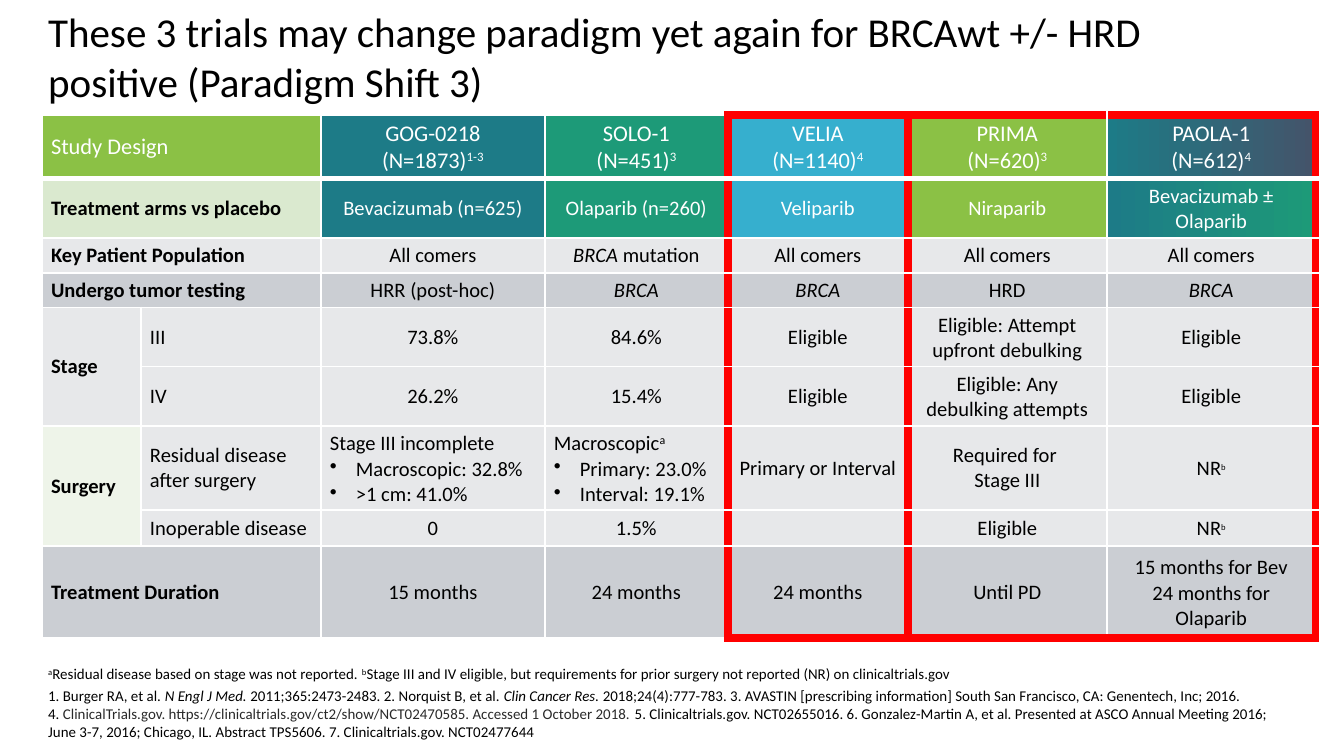
from lxml import etree
from pptx import Presentation, util as u
from pptx.dml.color import RGBColor
from pptx.enum import text as t
from pptx.oxml.ns import qn

PX = 914400 / 134.4
WHITE, BLACK, RED = "FFFFFF", "000000", "FF0000"
PALE, GREY = "E7E8EA", "CBCED3"
NAVY, TEAL, SKY, LIME = "1D7B87", "1D9A78", "36AFCE", "8BC145"


def px(n):
    return u.Emu(round(n * PX))


def write(para, line, size, color, bold=False):
    """Marks between bars: ^ raised, _ italic, ~ dark grey; \\v breaks the line."""
    for part in line.split("|"):
        mark = part[:1] if part[:1] in ("^", "_", "~") else ""
        for i, piece in enumerate(part[len(mark):].split("\v")):
            if i:
                para.add_line_break()
                etree.SubElement(para._p[-1], qn("a:rPr"), sz=str(size * 100))
            if not piece:
                continue
            run = para.add_run()
            run.text = piece
            font = run.font
            font.name, font.bold = "Calibri", bold
            font.size = u.Pt(8 if part == "^b" else size)
            font.color.rgb = RGBColor.from_string("292929" if mark == "~" else color)
            if mark == "_":
                font.italic = True
            if mark == "^":
                run._r.get_or_add_rPr().set("baseline", "30000")
    etree.SubElement(para._p, qn("a:endParaRPr"), sz=str(size * 100))


deck = Presentation()
deck.slide_width, deck.slide_height = px(1344), px(756)
slide = deck.slides.add_slide(deck.slide_layouts[6])

# Title and footnotes
notes = [
    "^a|Residual disease based on stage was not reported. |^b|Stage III and IV eligible, "
    "but requirements for prior surgery not reported (NR) on clinicaltrials.gov",
    "1. Burger RA, et al. |_N Engl J Med. |2011;365:2473-2483. 2. Norquist B, et al. "
    "|_Clin Cancer Res. |2018;24(4):777-783. 3. AVASTIN [prescribing information] "
    "South San Francisco, CA: Genentech, Inc; 2016. \v4.|~ ClinicalTrials.gov. "
    "https://clinicaltrials.gov/ct2/show/NCT02470585. Accessed 1 October 2018. "
    "|5. Clinicaltrials.gov. NCT02655016. 6. Gonzalez-Martin A, et al. Presented at ASCO "
    "Annual Meeting 2016; June 3-7, 2016; Chicago, IL. Abstract TPS5606. "
    "7. Clinicaltrials.gov. NCT02477644",
]
title = ["These 3 trials may change paradigm yet again for BRCAwt +/- HRD positive "
         "(Paradigm Shift 3)"]
for lines, box, size, anchor in (
    (title, (35, 19, 1211, 74), 22, t.MSO_ANCHOR.MIDDLE),
    (notes, (35, 663, 1255, 84), 8, t.MSO_ANCHOR.BOTTOM),
):
    frame = slide.shapes.add_textbox(*map(px, box)).text_frame
    frame.word_wrap, frame.vertical_anchor = True, anchor
    for i, line in enumerate(lines):
        para = frame.add_paragraph() if i else frame.paragraphs[0]
        if i:
            para.space_before = u.Pt(2.2)
        write(para, line, size, BLACK)

# Table content: None is a cell covered by a merge
rows = [
    ["Study Design", None, "GOG-0218\n(N=1873)|^1-3", "SOLO-1\n(N=451)|^3",
     "VELIA\v(N=1140)|^4", "PRIMA\n(N=620)|^3", "PAOLA-1\n(N=612)|^4"],
    ["Treatment arms vs placebo", None, "Bevacizumab (n=625)", "Olaparib (n=260)",
     "Veliparib", "Niraparib", "Bevacizumab ± Olaparib"],
    ["Key Patient Population", None, "All comers", "_BRCA |mutation",
     "All comers", "All comers", "All comers"],
    ["Undergo tumor testing", None, "HRR (post-hoc)", "_BRCA", "_BRCA", "HRD", "_BRCA"],
    ["Stage", "III", "73.8%", "84.6%", "Eligible",
     "Eligible: Attempt upfront debulking", "Eligible"],
    [None, "IV", "26.2%", "15.4%", "Eligible", "Eligible: Any debulking attempts", "Eligible"],
    ["Surgery", "Residual disease after surgery",
     "Stage III incomplete\n•Macroscopic: 32.8%\n•>1 cm: 41.0%",
     "Macroscopic|^a\n•Primary: 23.0%\n•Interval: 19.1%",
     "Primary or Interval", "Required for \vStage III", "NR|^b"],
    [None, "Inoperable disease", "0", "1.5%", "", "Eligible", "NR|^b"],
    ["Treatment Duration", None, "15 months", "24 months", "24 months", "Until PD",
     "15 months for Bev\n24 months for Olaparib"],
]
fills = [
    [LIME, LIME, NAVY, TEAL, SKY, LIME, (NAVY, "44546A")],
    ["DAE9CF", "DAE9CF", NAVY, TEAL, SKY, LIME, (NAVY, TEAL)],
] + [[tone] * 7 for tone in (PALE, GREY, PALE, PALE, PALE, PALE, GREY)]
fills[6][0] = fills[7][0] = "EEF4E9"
wide = [99, 180, 224, 183, 180, 199, 209]
high = [60, 56, 32, 32, 56, 38, 51, 36, 89]
last = len(rows) - 1

# Table grid
shape = slide.shapes.add_table(len(high), len(wide), px(42), px(115), px(1274), px(525))
table = shape.table
table.first_row = table.horz_banding = False
for col, w in zip(table.columns, wide):
    col.width = px(w)
for row, h in zip(table.rows, high):
    row.height = px(h)
for r in (0, 1, 2, 3, 8):
    table.cell(r, 0).merge(table.cell(r, 1))
for r in (4, 6):
    table.cell(r, 0).merge(table.cell(r + 1, 0))

# Cells
for r, row in enumerate(rows):
    for c, words in enumerate(row):
        cell = table.cell(r, c)
        cell.vertical_anchor = t.MSO_ANCHOR.MIDDLE
        cell.margin_left = cell.margin_right = px(9)
        cell.margin_top = cell.margin_bottom = px(9 if r == last and c > 1 else 5)

        # White rules, with red frames around the three trials
        red = {"lnL": c in (4, 5), "lnR": c in (3, 4, 6),
               "lnT": r == 0 and c > 3, "lnB": r == last and c > 3}
        props = cell._tc.get_or_add_tcPr()
        for side, hot in red.items():
            width = 4.5 if hot else 3 if r == 0 and side == "lnB" else 1
            rule = etree.SubElement(props, qn("a:" + side), w=str(u.Pt(width)))
            solid = etree.SubElement(rule, qn("a:solidFill"))
            etree.SubElement(solid, qn("a:srgbClr"), val=RED if hot else WHITE)

        tone = fills[r][c]
        if isinstance(tone, tuple):
            cell.fill.gradient()
            cell.fill.gradient_angle = 180
            for stop, shade in zip(cell.fill.gradient_stops, reversed(tone)):
                stop.color.rgb = RGBColor.from_string(shade)
        else:
            cell.fill.solid()
            cell.fill.fore_color.rgb = RGBColor.from_string(tone)

        if words is None:
            continue
        frame = cell.text_frame
        color = WHITE if r == 0 or (r == 1 and c > 1) else BLACK
        for i, line in enumerate(words.split("\n")):
            para = frame.add_paragraph() if i else frame.paragraphs[0]
            if line.startswith("•"):
                form = para._p.get_or_add_pPr()
                form.set("marL", str(px(26)))
                form.set("indent", str(px(-26)))
                etree.SubElement(form, qn("a:buChar"), char="•")
            elif c > 1 and "•" not in words:
                para.alignment = t.PP_ALIGN.CENTER
            write(para, line.lstrip("•"), 12 if r == 0 else 11, color, c == 0 and r > 0)

shape.height = px(525)
deck.save("out.pptx")
